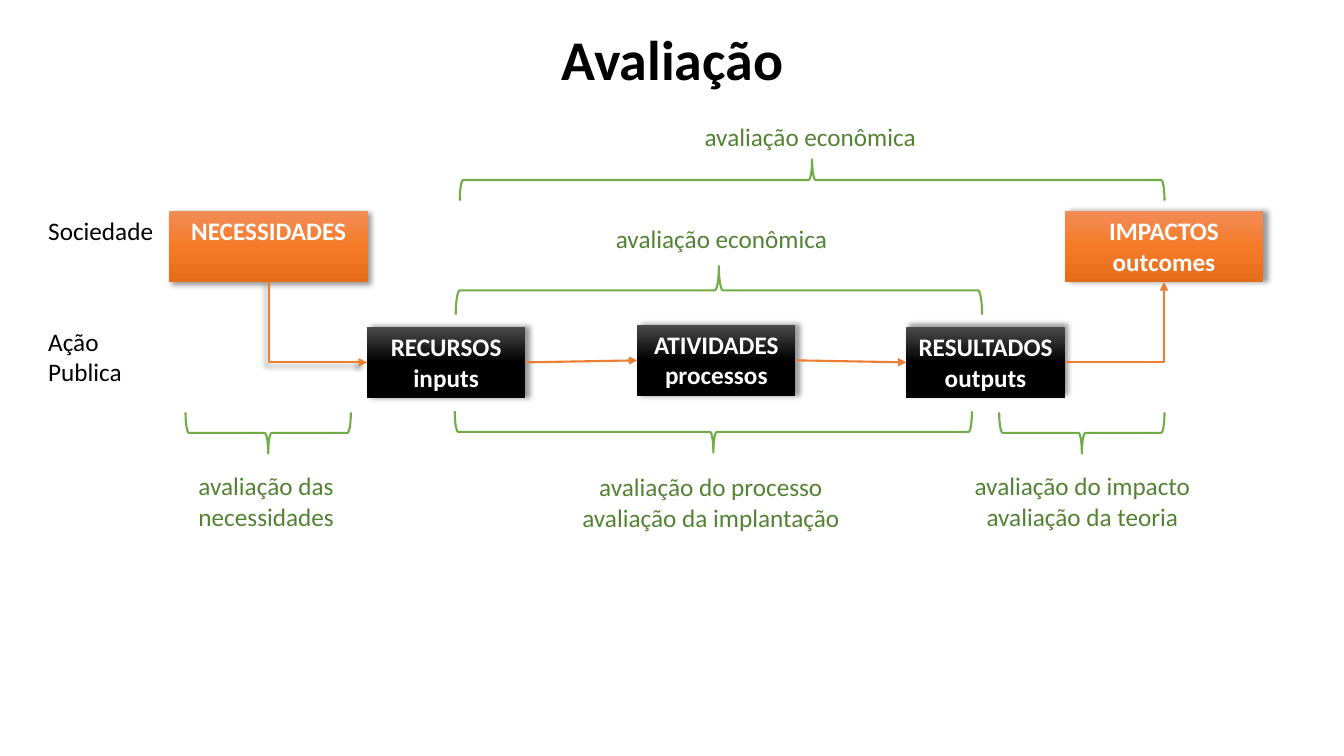
from copy import deepcopy

from pptx import Presentation
from pptx.dml.color import RGBColor
from pptx.enum.shapes import MSO_CONNECTOR as CONN, MSO_SHAPE as SHAPE
from pptx.enum.text import MSO_ANCHOR as ANCHOR, MSO_AUTO_SIZE as AUTO, PP_ALIGN as ALIGN
from pptx.oxml.ns import qn
from pptx.oxml.xmlchemy import OxmlElement
from pptx.util import Inches, Pt

COLORS = {"black": "000000", "white": "FFFFFF", "arrow": "ED7D31",
          "brace": "70AD47", "label": "548235"}
GRADIENTS = {"society": ("F18C57", "F67B28", "E56C19"),
             "action": ("4B4B4B", "000000", "000000")}
BOX_W = {"society": 1.97, "action": 1.57}
BOX_H = 0.71

TITLE = "Avaliação"
# name: (lines, kind, left, top, shadow angle)
BOXES = {
    "needs": (["NECESSIDADES"], "society", 1.68, 2.09, 45),
    "impacts": (["IMPACTOS", "outcomes"], "society", 10.56, 2.09, 0),
    "inputs": (["RECURSOS", "inputs"], "action", 3.64, 3.24, 0),
    "activities": (["ATIVIDADES", "processos"], "action", 6.32, 3.22, 0),
    "outputs": (["RESULTADOS", "outputs"], "action", 8.99, 3.24, 315),
}
# from box, side, to box, side, shape, shadow angle
ARROWS = [
    ("needs", 2, "inputs", 1, CONN.ELBOW, 135),
    ("inputs", 3, "activities", 1, CONN.STRAIGHT, None),
    ("activities", 3, "outputs", 1, CONN.STRAIGHT, None),
    ("outputs", 3, "impacts", 2, CONN.ELBOW, None),
]
# left, right, top, depth, rotation
BRACES = [
    (4.56, 11.55, 1.58, 0.41, 270),
    (4.52, 9.74, 2.64, 0.48, 270),
    (1.84, 3.48, 4.09, 0.41, 90),
    (4.51, 9.64, 4.08, 0.41, 90),
    (9.91, 11.55, 4.09, 0.41, 90),
]
# lines, left, top, width, height, colour, alignment, wrap
LABELS = [
    (["Sociedade"], 0.38, 2.09, 1.29, 0.4, "black", ALIGN.LEFT, True),
    (["Ação Publica"], 0.38, 3.19, 1.29, 0.71, "black", ALIGN.LEFT, True),
    (["avaliação econômica"], 6.89, 1.15, 2.32, 0.4, "label", ALIGN.LEFT, False),
    (["avaliação econômica"], 6.01, 2.17, 2.32, 0.4, "label", ALIGN.LEFT, False),
    (["avaliação das", "necessidades"], 1.87, 4.62, 1.61, 0.71, "label", ALIGN.LEFT, False),
    (["avaliação do processo", "avaliação da implantação"],
     5.66, 4.63, 2.78, 0.71, "label", ALIGN.CENTER, False),
    (["avaliação do impacto", "avaliação da teoria"],
     9.55, 4.62, 2.37, 0.71, "label", ALIGN.CENTER, False),
]


def rgb(name):
    return RGBColor.from_string(COLORS[name])


def add_child(parent, tag, **attrs):
    child = OxmlElement(tag)
    for key, value in attrs.items():
        child.set(key, str(value))
    parent.append(child)
    return child


def write(tf, lines, color, align, size=18, bold=False):
    for i, line in enumerate(lines):
        p = tf.paragraphs[0] if i == 0 else tf.add_paragraph()
        p.alignment = align
        r = p.add_run()
        r.text = line
        for key, value in {"name": "Calibri", "size": Pt(size), "bold": bold}.items():
            setattr(r.font, key, value)
        r.font.color.rgb = rgb(color)


def set_shadow(s, angle):
    """Replace the theme effect: none, or a soft shadow at the angle."""
    pr = s._element.spPr
    for old in pr.findall(qn("a:effectLst")):
        pr.remove(old)
    effects = add_child(pr, "a:effectLst")
    if angle is not None:
        shadow = add_child(effects, "a:outerShdw", blurRad=Pt(4), dist=Pt(3),
                           dir=angle * 60000, algn="ctr", rotWithShape=0)
        color = add_child(shadow, "a:srgbClr", val=COLORS["black"])
        add_child(color, "a:alpha", val=40000)


def set_line(s, color):
    s.line.color.rgb = rgb(color)
    s.line.width = Pt(1.5)


def add_box(shapes, lines, kind, left, top, angle):
    s = shapes.add_shape(SHAPE.RECTANGLE, Inches(left), Inches(top),
                         Inches(BOX_W[kind]), Inches(BOX_H))
    s.fill.gradient()
    s.fill.gradient_angle = 270
    stop_list = s._element.spPr.find(qn("a:gradFill")).find(qn("a:gsLst"))
    stop_list.insert(1, deepcopy(stop_list[0]))
    for stop, color, place in zip(s.fill.gradient_stops, GRADIENTS[kind], (0, 0.5, 1)):
        stop.color.rgb = RGBColor.from_string(color)
        stop.position = place
    s.line.fill.background()
    set_shadow(s, angle)
    s.text_frame.word_wrap = True
    s.text_frame.vertical_anchor = ANCHOR.TOP
    write(s.text_frame, lines, "white", ALIGN.CENTER, bold=True)
    return s


def add_arrow(shapes, start, start_side, end, end_side, kind, angle):
    s = shapes.add_connector(kind, 0, 0, 0, 0)
    s.begin_connect(start, start_side)
    s.end_connect(end, end_side)
    set_line(s, "arrow")
    pr = s._element.spPr
    add_child(pr.find(qn("a:ln")), "a:tailEnd", type="triangle")
    set_shadow(s, angle)
    if kind == CONN.ELBOW:
        pr.find(qn("a:prstGeom")).set("prst", "bentConnector2")
        if start_side == 2:  # leave downwards: turn the bend about its centre
            w, h = s.width, s.height
            s.left, s.top = s.left + (w - h) // 2, s.top + (h - w) // 2
            s.width, s.height = h, w
            xfrm = pr.find(qn("a:xfrm"))
            xfrm.set("rot", str(270 * 60000))
            xfrm.set("flipH", "1")


def add_brace(shapes, left, right, top, depth, rotation):
    span = right - left
    s = shapes.add_shape(SHAPE.RIGHT_BRACE, Inches((left + right - depth) / 2),
                         Inches(top + (depth - span) / 2), Inches(depth), Inches(span))
    s.rotation = rotation
    s.fill.background()
    set_line(s, "brace")
    s.shadow.inherit = False


def add_label(shapes, lines, left, top, width, height, color, align, wrap):
    tf = shapes.add_textbox(Inches(left), Inches(top), Inches(width), Inches(height)).text_frame
    tf.word_wrap = wrap
    tf.auto_size = AUTO.SHAPE_TO_FIT_TEXT
    write(tf, lines, color, align)


def main():
    prs = Presentation()
    prs.slide_width, prs.slide_height = Inches(13.33), Inches(7.5)
    shapes = prs.slides.add_slide(prs.slide_layouts[5]).shapes

    # Title
    title = shapes.title
    title.left, title.top = Inches(0.92), Inches(0.19)
    title.width, title.height = Inches(11.5), Inches(0.85)
    title.text_frame.vertical_anchor = ANCHOR.MIDDLE
    write(title.text_frame, [TITLE], "black", ALIGN.CENTER, size=40, bold=True)
    title.text_frame.paragraphs[0].line_spacing = 0.9

    # Flow, braces and labels
    boxes = {name: add_box(shapes, *box) for name, box in BOXES.items()}
    for start, start_side, end, end_side, kind, angle in ARROWS:
        add_arrow(shapes, boxes[start], start_side, boxes[end], end_side, kind, angle)
    for brace in BRACES:
        add_brace(shapes, *brace)
    for label in LABELS:
        add_label(shapes, *label)

    prs.save("out.pptx")


if __name__ == "__main__":
    main()
